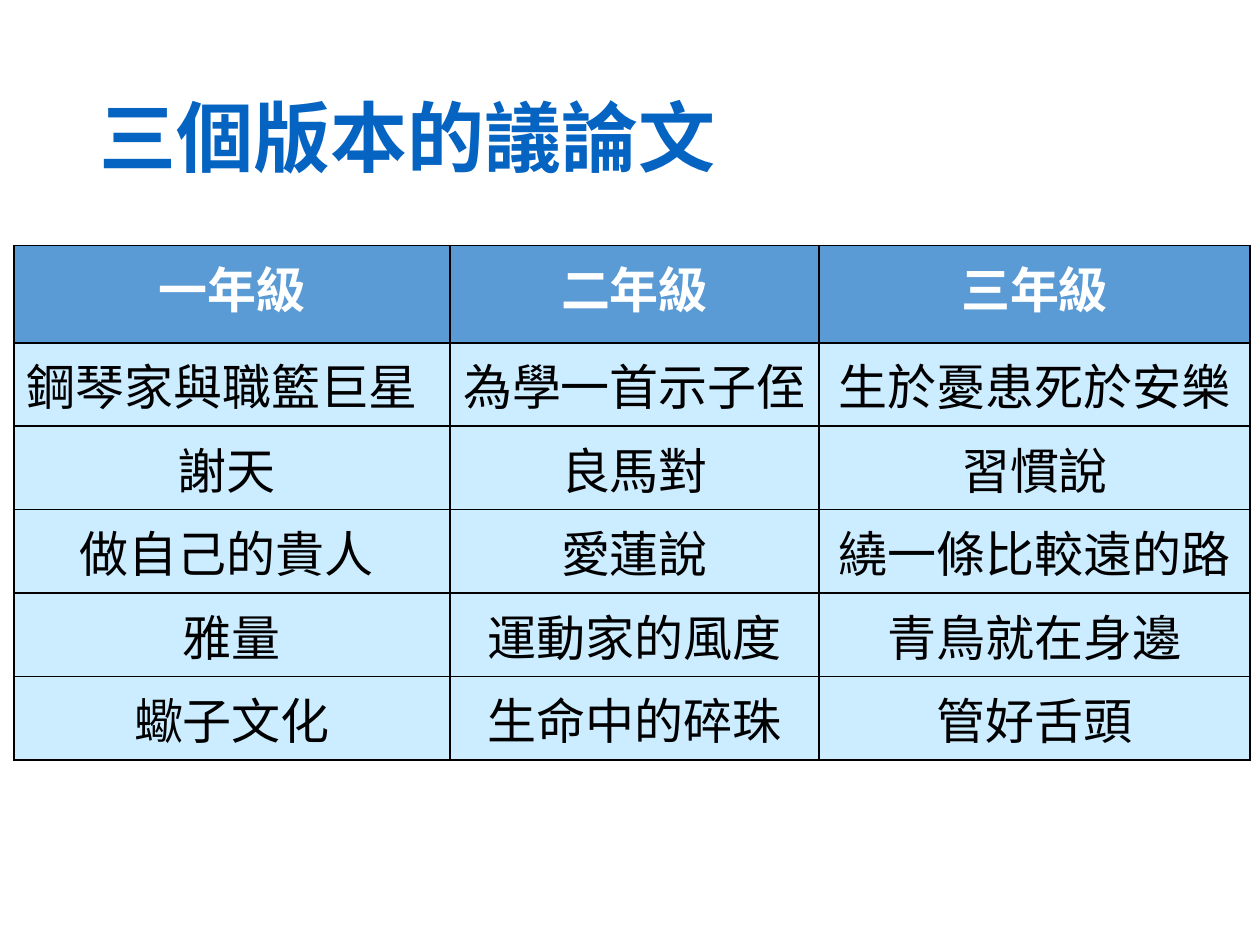
from lxml.etree import SubElement
from pptx import Presentation
from pptx.dml.color import RGBColor
from pptx.enum.text import MSO_ANCHOR as Anchor, PP_ALIGN as Align
from pptx.oxml.ns import qn
from pptx.util import Cm, Pt

TITLE_BLUE = RGBColor(0x05, 0x63, 0xC1)
HEADER_BLUE = RGBColor(0x5B, 0x9B, 0xD5)
PALE_BLUE = RGBColor(0xCC, 0xEC, 0xFF)
WHITE = RGBColor(0xFF, 0xFF, 0xFF)
BLACK = RGBColor(0, 0, 0)
TYPEFACE = "Noto Sans CJK SC"

COLUMN_WIDTHS = (8.79, 7.44, 8.69)
ROW_HEIGHTS = (1.96, 1.63, 1.45, 1.52, 1.45, 1.57)
ESSAYS = (
    ("一年級", "二年級", "三年級"),
    ("鋼琴家與職籃巨星", "為學一首示子侄", "生於憂患死於安樂"),
    ("謝天 ", "良馬對", "習慣說"),
    ("做自己的貴人 ", "愛蓮說", "繞一條比較遠的路"),
    ("雅量", "運動家的風度", "青鳥就在身邊"),
    ("蠍子文化", "生命中的碎珠", "管好舌頭"),
)


def format_paragraph(paragraph, size, color, bold, align):
    """Set the alignment and font of a paragraph, East Asian typeface included."""
    paragraph.alignment = align
    font = paragraph.font
    font.size = Pt(size)
    font.bold = bold
    font.color.rgb = color
    font.name = TYPEFACE
    properties = paragraph._p.pPr.find(qn("a:defRPr"))
    SubElement(properties, qn("a:ea"), typeface=TYPEFACE)


def add_borders(cell):
    """Draw a thin black line on each side of a cell."""
    properties = cell._tc.get_or_add_tcPr()
    for side in ("lnL", "lnR", "lnT", "lnB"):
        line = SubElement(properties, qn(f"a:{side}"), w=str(Pt(1)))
        fill = SubElement(line, qn("a:solidFill"))
        SubElement(fill, qn("a:srgbClr"), val=str(BLACK))


def fill_cell(cell, text, is_header, align):
    """Write and format one cell of the essay table."""
    cell.text = text
    add_borders(cell)
    cell.fill.solid()
    cell.fill.fore_color.rgb = HEADER_BLUE if is_header else PALE_BLUE
    color = WHITE if is_header else BLACK
    format_paragraph(cell.text_frame.paragraphs[0], 28, color, is_header, align)


def add_title(slide, text):
    """Place the slide title."""
    title = slide.shapes.title
    title.left, title.top = Cm(1.75), Cm(1.02)
    title.width, title.height = Cm(21.9), Cm(3.68)
    title.text_frame.text = text
    title.text_frame.vertical_anchor = Anchor.MIDDLE
    heading = title.text_frame.paragraphs[0]
    heading.line_spacing = 0.9
    format_paragraph(heading, 44, TITLE_BLUE, True, Align.LEFT)


def add_essay_table(slide):
    """Add the table of essays by school year."""
    table = slide.shapes.add_table(
        len(ESSAYS), len(COLUMN_WIDTHS), Cm(0.28), Cm(4.95),
        Cm(sum(COLUMN_WIDTHS)), Cm(sum(ROW_HEIGHTS)),
    ).table
    table.horz_banding = False
    for column, width in zip(table.columns, COLUMN_WIDTHS):
        column.width = Cm(width)
    for row, height in zip(table.rows, ROW_HEIGHTS):
        row.height = Cm(height)
    for r, titles in enumerate(ESSAYS):
        for c, essay in enumerate(titles):
            align = Align.LEFT if (r, c) == (1, 0) else Align.CENTER
            fill_cell(table.cell(r, c), essay, r == 0, align)


def main():
    """Build and save the slide."""
    deck = Presentation()
    deck.slide_width, deck.slide_height = Cm(25.4), Cm(19.05)
    slide = deck.slides.add_slide(deck.slide_layouts[5])
    add_title(slide, "三個版本的議論文")
    add_essay_table(slide)
    deck.save("out.pptx")


if __name__ == "__main__":
    main()
